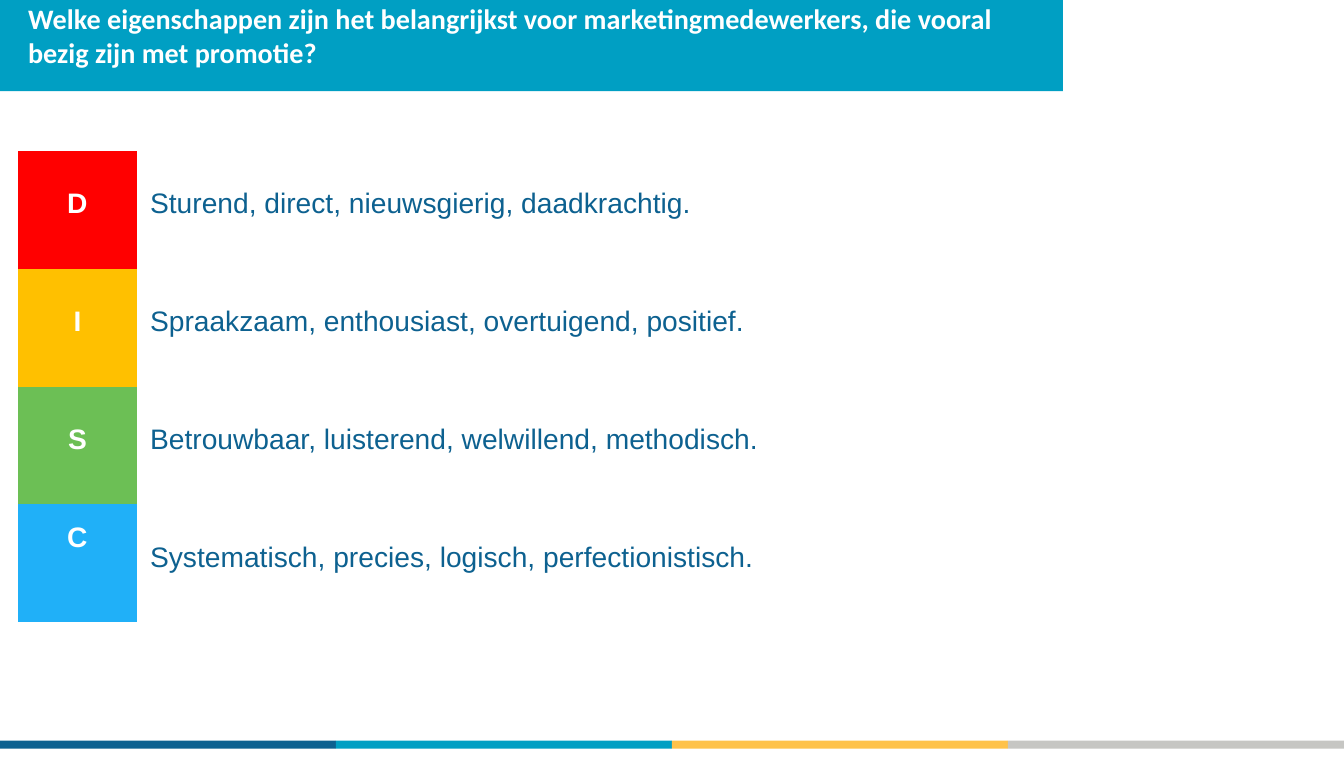
from pptx import Presentation
from pptx.dml.color import RGBColor
from pptx.enum import shapes, text
from pptx.oxml import ns
from pptx.util import Pt

TITLE = ("Welke eigenschappen zijn het belangrijkst voor marketingmedewerkers, "
         "die vooral bezig zijn met promotie?")
PROFILES = [
    ("D", "red", 26.6, "Sturend, direct, nieuwsgierig, daadkrachtig."),
    ("I", "amber", 26.6, "Spraakzaam, enthousiast, overtuigend, positief."),
    ("S", "green", 26.6, "Betrouwbaar, luisterend, welwillend, methodisch."),
    ("C", "sky", 12.8, "Systematisch, precies, logisch, perfectionistisch."),
]
STRIPES = ["navy", "teal", "gold", "grey"]
COLOURS = {
    "white": "FFFFFF", "navy": "0D6190", "teal": "009FC3", "gold": "FEC24A",
    "grey": "C6C6C3", "red": "FF0000", "amber": "FFC000", "green": "6CBF55",
    "sky": "20B0F8",
}
PAGE_WIDTH, PAGE_HEIGHT = 954.72, 540
LETTER_WIDTH, TRAITS_WIDTH, ROW_HEIGHT = 84.24, 772.56, 83.7
TEXT_TOP = 26.6
NO_GRID_STYLE = "{2D5ABB26-0587-4C30-8999-92F81FD0307C}"


def colour(name):
    return RGBColor.from_string(COLOURS[name])


def add_bar(page, left, top, width, height, fill):
    bar = page.shapes.add_shape(shapes.MSO_SHAPE.RECTANGLE,
                                Pt(left), Pt(top), Pt(width), Pt(height))
    bar.shadow.inherit = False
    bar.fill.solid()
    bar.fill.fore_color.rgb = colour(fill)
    bar.line.fill.background()


def write(frame, words, face, ink, bold):
    para = frame.paragraphs[0]
    para.text = words
    para.font.name = face
    para.font.size = Pt(20)
    para.font.bold = bold
    para.font.color.rgb = colour(ink)
    return para


def fill_cell(cell, words, ink, bold, top):
    cell.margin_left = cell.margin_right = Pt(9.5)
    cell.margin_top, cell.margin_bottom = Pt(top), Pt(3.6)
    cell.vertical_anchor = text.MSO_ANCHOR.TOP
    return write(cell.text_frame, words, "Arial", ink, bold)


def add_profiles(page):
    frame = page.shapes.add_table(
        len(PROFILES), 2, Pt(12.9), Pt(107.3),
        Pt(LETTER_WIDTH + TRAITS_WIDTH), Pt(ROW_HEIGHT * len(PROFILES)))
    table = frame.table
    table.first_row = table.horz_banding = False
    table._tbl.tblPr.find(ns.qn("a:tableStyleId")).text = NO_GRID_STYLE
    table.columns[0].width = Pt(LETTER_WIDTH)
    table.columns[1].width = Pt(TRAITS_WIDTH)
    for row, (letter, fill, letter_top, traits) in enumerate(PROFILES):
        table.rows[row].height = Pt(ROW_HEIGHT)
        letter_cell, traits_cell = table.cell(row, 0), table.cell(row, 1)
        para = fill_cell(letter_cell, letter, "white", True, letter_top)
        para.alignment = text.PP_ALIGN.CENTER
        letter_cell.fill.solid()
        letter_cell.fill.fore_color.rgb = colour(fill)
        fill_cell(traits_cell, traits, "navy", False, TEXT_TOP)
        traits_cell.fill.background()


def add_title(page):
    box = page.shapes.add_textbox(Pt(12.9), Pt(1.2), Pt(719.3), Pt(50))
    frame = box.text_frame
    frame.word_wrap = True
    frame.margin_top = frame.margin_bottom = 0
    write(frame, TITLE, "Calibri", "white", True)


def main():
    deck = Presentation()
    deck.slide_width, deck.slide_height = Pt(PAGE_WIDTH), Pt(PAGE_HEIGHT)
    page = deck.slides.add_slide(deck.slide_layouts[6])
    stripe_width = PAGE_WIDTH / len(STRIPES)
    for index, fill in enumerate(STRIPES):
        add_bar(page, index * stripe_width, 526.2, stripe_width, 5.8, fill)
    add_bar(page, 0, 0, 755, 64.8, "teal")
    add_profiles(page)
    add_title(page)
    deck.save("out.pptx")


if __name__ == "__main__":
    main()
